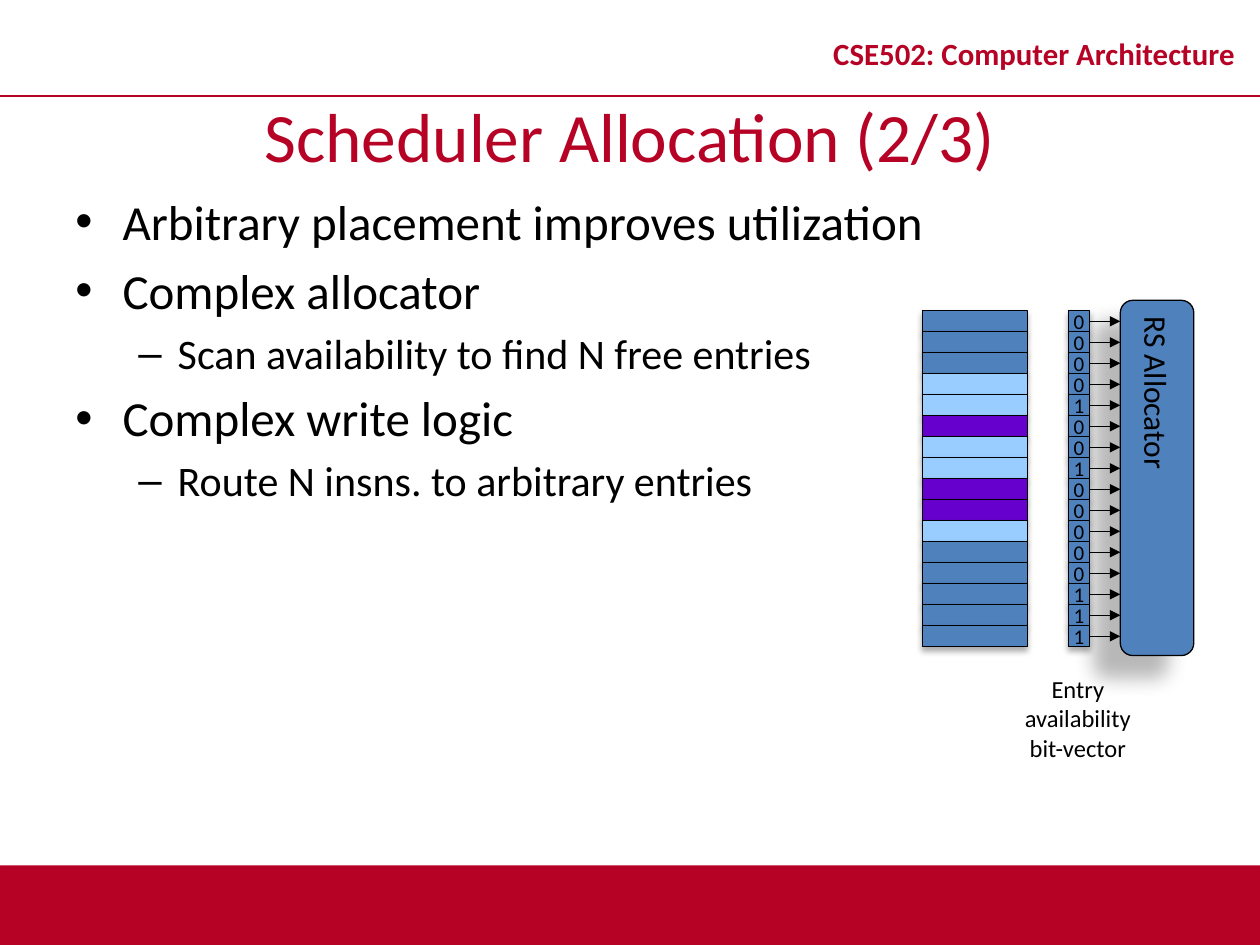
import pptx
import pptx.dml.color
import pptx.enum.shapes
import pptx.enum.text
import pptx.oxml
import pptx.oxml.ns
import pptx.util
from lxml import etree

Pt = pptx.util.Pt
qn = pptx.oxml.ns.qn
SHAPE = pptx.enum.shapes.MSO_SHAPE
ALIGN = pptx.enum.text.PP_ALIGN
ANCHOR = pptx.enum.text.MSO_ANCHOR
COLORS = {
    "red": "B60225",
    "black": "000000",
    "blue": "4F81BD",
    "light": "99CCFF",
    "purple": "6600CC",
}
CELL_SHADOW = (32, 3.5, 2.2, 90)
ENTRIES = ["blue"] * 3 + ["light"] * 2 + ["purple"] + ["light"] * 2
ENTRIES += ["purple"] * 2 + ["light"] + ["blue"] * 5
BITS = "0000100100000111"
BULLETS = [
    (0, "Arbitrary placement improves utilization"),
    (0, "Complex allocator"),
    (1, "Scan availability to find N free entries"),
    (0, "Complex write logic"),
    (1, "Route N insns. to arbitrary entries"),
]
LEVELS = [("•", 27, -27, 28), ("–", 58.5, -22.5, 24)]
ROW = 12
TOP = 177.6


def rgb(name):
    return pptx.dml.color.RGBColor.from_string(COLORS[name])


def write(p, text, size=14, color="black", bold=False, align=ALIGN.CENTER, spacing=None):
    p.alignment = align
    if spacing:
        p.line_spacing = spacing
    r = p.add_run()
    r.text = text
    r.font.name = "Calibri"
    r.font.size = Pt(size)
    r.font.bold = bold
    r.font.color.rgb = rgb(color)


class Deck:
    """Holds the style and the current slide, and draws each kind of element."""

    def __init__(self, prs):
        self.line_width = Pt(0.75)
        self.s = prs.slides.add_slide(prs.slide_layouts[6])

    def shadow(self, sp, alpha, blur, dist, angle):
        effects = sp.element.spPr.find(qn("a:effectLst"))
        outer = etree.SubElement(effects, qn("a:outerShdw"), blurRad=str(Pt(blur)),
                                 dist=str(Pt(dist)), dir=str(angle * 60000),
                                 algn="ctr", rotWithShape="0")
        color = etree.SubElement(outer, qn("a:srgbClr"), val=COLORS["black"])
        etree.SubElement(color, qn("a:alpha"), val=str(alpha * 1000))

    def box(self, x, y, w, h, fill, shadow, kind=SHAPE.RECTANGLE, outline=True):
        sp = self.s.shapes.add_shape(kind, Pt(x), Pt(y), Pt(w), Pt(h))
        sp.fill.solid()
        sp.fill.fore_color.rgb = rgb(fill)
        if outline:
            sp.line.color.rgb = rgb("black")
            sp.line.width = self.line_width
        else:
            sp.line.fill.background()
        sp.shadow.inherit = False
        self.shadow(sp, *shadow)
        return sp

    def line(self, x1, y1, x2, y2, color="black", width=None, arrow=False):
        sp = self.s.shapes.add_connector(pptx.enum.shapes.MSO_CONNECTOR.STRAIGHT,
                                         Pt(x1), Pt(y1), Pt(x2), Pt(y2))
        sp.line.color.rgb = rgb(color)
        sp.line.width = width or self.line_width
        spPr = sp.element.spPr
        if arrow:
            etree.SubElement(spPr.find(qn("a:ln")), qn("a:tailEnd"), type="triangle")
        etree.SubElement(spPr, qn("a:effectLst"))

    def text(self, x, y, w, h, lines=(), anchor=ANCHOR.MIDDLE, **style):
        tf = self.s.shapes.add_textbox(Pt(x), Pt(y), Pt(w), Pt(h)).text_frame
        tf.word_wrap = True
        tf.vertical_anchor = anchor
        for i, text in enumerate(lines):
            write(tf.add_paragraph() if i else tf.paragraphs[0], text, **style)
        return tf

    def bullets(self, x, y, w, h, items):
        tf = self.text(x, y, w, h, anchor=ANCHOR.TOP)
        for i, (level, text) in enumerate(items):
            char, margin, indent, size = LEVELS[level]
            p = tf.add_paragraph() if i else tf.paragraphs[0]
            p.level = level
            pPr = p._p.get_or_add_pPr()
            pPr.set("marL", str(Pt(margin)))
            pPr.set("indent", str(Pt(indent)))
            etree.SubElement(pPr, qn("a:buFont"), typeface="Arial")
            etree.SubElement(pPr, qn("a:buChar"), char=char)
            if i:
                p.space_before = Pt(size * 0.2)
            write(p, text, size=size, align=ALIGN.LEFT)

    def bit(self, x, y, value):
        tf = self.box(x, y, ROW, ROW, "blue", CELL_SHADOW).text_frame
        tf.margin_left = tf.margin_right = 0
        tf.word_wrap = False
        tf.vertical_anchor = ANCHOR.MIDDLE
        write(tf.paragraphs[0], value, size=12)

    def allocator(self, x, y, w, h, label):
        sp = self.box(x, y, w, h, "blue", (28, 11.8, 19.7, 141), SHAPE.ROUNDED_RECTANGLE)
        sp.adjustments[0] = 0.17
        tf = sp.text_frame
        tf.vertical_anchor = ANCHOR.MIDDLE
        sp.element.txBody.find(qn("a:bodyPr")).set("vert", "vert")
        write(tf.paragraphs[0], label, size=18, align=ALIGN.LEFT)


def main():
    prs = pptx.Presentation()
    prs.slide_width, prs.slide_height = Pt(720), Pt(540)
    deck = Deck(prs)
    deck.box(0, 494.5, 720, 45.5, "red", (35, 3.1, 1.8, 90), outline=False)
    deck.line(0, 54.75, 720, 54.75, color="red", width=Pt(1))
    deck.text(462, 9.4, 258, 45.4, ["CSE502: Computer Architecture"],
              size=17.6, color="red", bold=True, spacing=0.8)
    deck.text(0, 54.75, 720, 45, ["Scheduler Allocation (2/3)"], size=39.6, color="red")
    deck.bullets(36, 106, 648, 385, BULLETS)
    for i, fill in enumerate(ENTRIES):
        deck.box(527, TOP + i * ROW, 60, ROW, fill, CELL_SHADOW)
    deck.allocator(640.2, 171.6, 42, 203, "RS Allocator")
    for i in range(len(BITS)):
        y = TOP + (i + 0.5) * ROW
        deck.line(622.6, y, 640.2, y, arrow=True)
    deck.text(562.4, 381.6, 107, 41, ["Entry availability", "bit-vector"], anchor=ANCHOR.TOP)
    for i, value in enumerate(BITS):
        deck.bit(610.6, TOP + i * ROW, value)
    prs.save("out.pptx")


if __name__ == "__main__":
    main()
